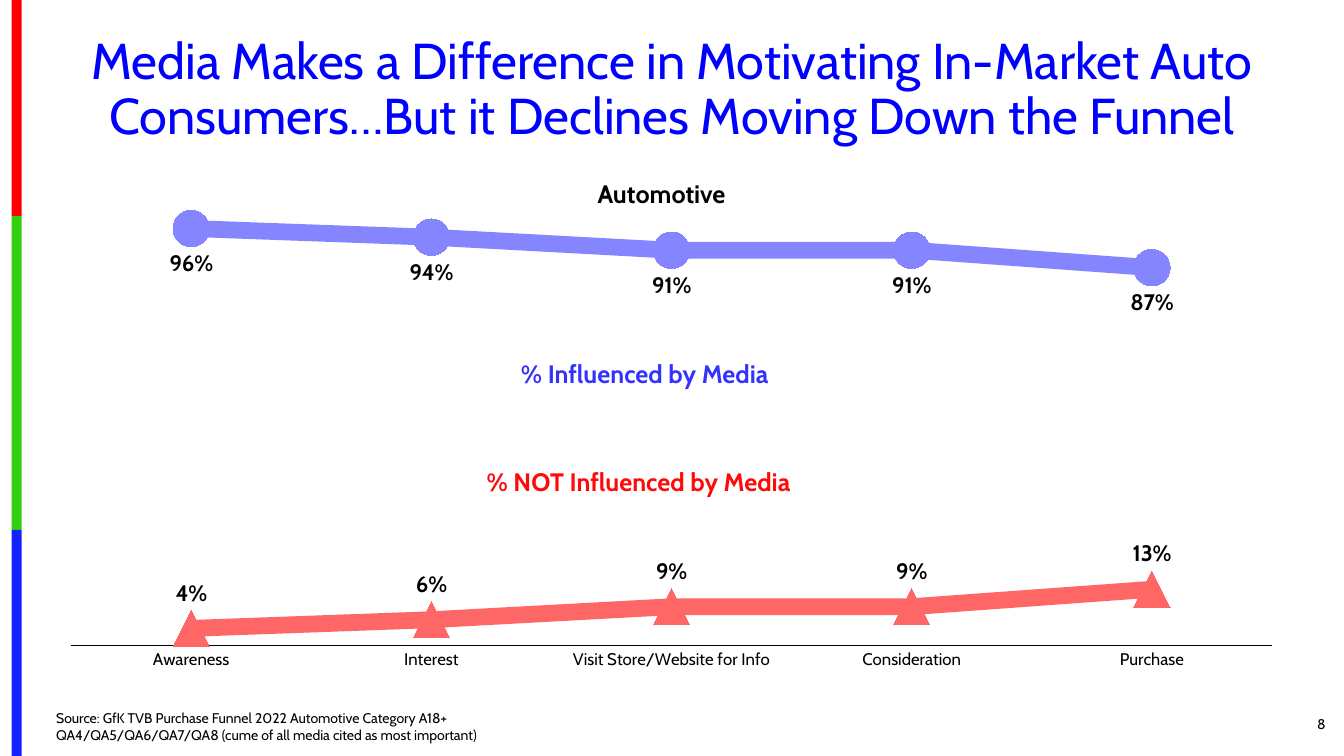
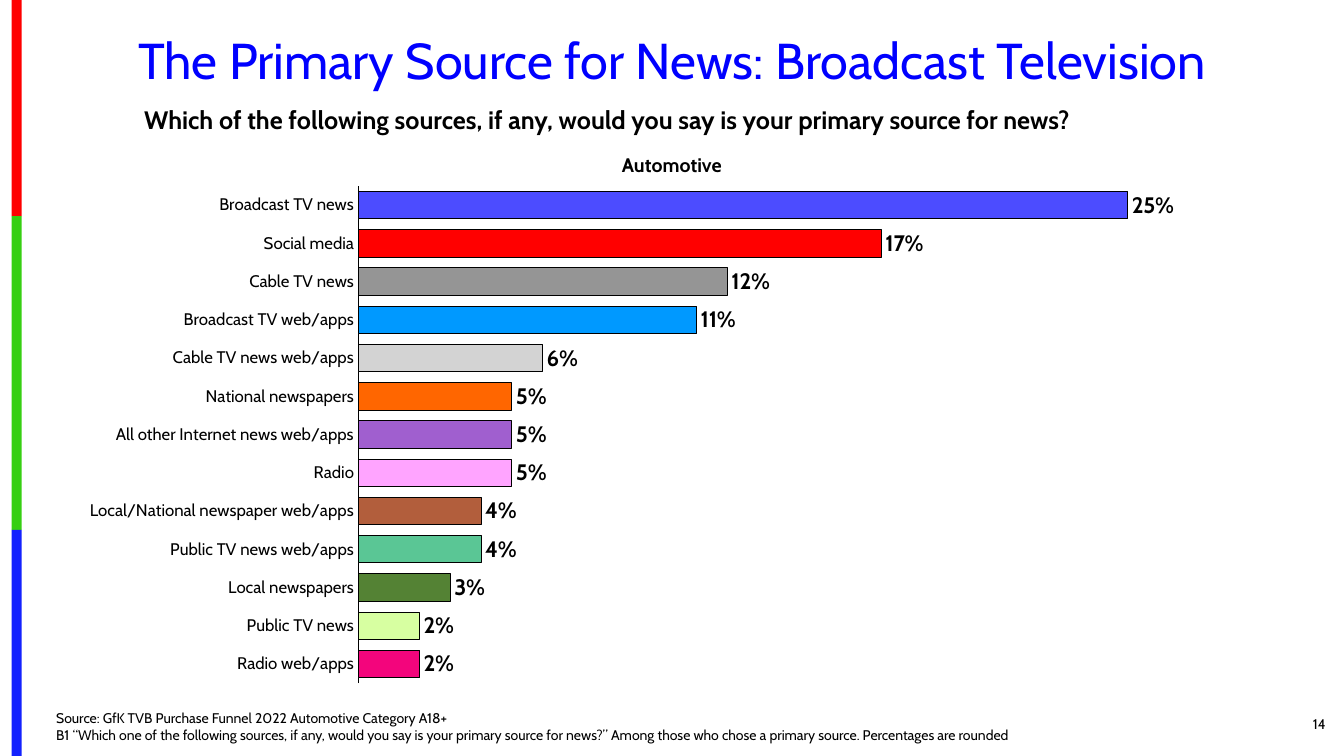
from lxml import etree
from pptx import Presentation
from pptx import util as u
from pptx.chart.data import CategoryChartData
from pptx.dml.color import RGBColor
from pptx.enum import chart as ch, shapes, text
from pptx.oxml.ns import qn

Pt = u.Pt
BLACK = RGBColor(0, 0, 0)
TITLE_BLUE = RGBColor(0x00, 0x00, 0xFF)
INFLUENCED = RGBColor(0x33, 0x33, 0xFF)
NOT_INFLUENCED = RGBColor(0xFF, 0x09, 0x09)
INFLUENCED_LINE = RGBColor(0x85, 0x85, 0xFF)
NOT_INFLUENCED_LINE = RGBColor(0xFF, 0x66, 0x66)

# Shared look
FONT = "Cabin"
SLIDE_SIZE = (960, 540)
BAND_LEFT, BAND_WIDTH = 8.3, 7.2
BAND_EDGES = (0, 154.5, 378.5, 540)
BAND_COLOURS = (RGBColor(0xFE, 0, 0), RGBColor(0x36, 0xCF, 0x12), RGBColor(0x13, 0x22, 0xFE))
LEFT, CENTER, RIGHT = text.PP_ALIGN.LEFT, text.PP_ALIGN.CENTER, text.PP_ALIGN.RIGHT
TOP, MIDDLE, BOTTOM = text.MSO_ANCHOR.TOP, text.MSO_ANCHOR.MIDDLE, text.MSO_ANCHOR.BOTTOM
STYLES = {
    "title": dict(font=dict(size=Pt(36), color=TITLE_BLUE),
                  paragraph=dict(alignment=CENTER, line_spacing=0.9), anchor=TOP),
    "heading": dict(font=dict(size=Pt(18), bold=True), paragraph=dict(alignment=LEFT), anchor=TOP),
    "caption": dict(font=dict(size=Pt(14), bold=True), paragraph=dict(alignment=CENTER), anchor=TOP),
    "source": dict(font=dict(size=Pt(10)), paragraph=dict(alignment=LEFT), anchor=BOTTOM),
    "number": dict(font=dict(size=Pt(10)), paragraph=dict(alignment=RIGHT), anchor=MIDDLE),
}
TITLE_BOX = (33, 22.3, 894, 86)
SOURCE_BOX = (33, 502.5, 744, 31.7)
NUMBER_BOX = (876, 502.5, 78, 28.8)
SOURCE = "Source: GfK TVB Purchase Funnel 2022 Automotive Category A18+"

# Content: purchase funnel
FUNNEL_STAGES = ["Awareness", "Interest", "Visit Store/Website for Info", "Consideration", "Purchase"]
FUNNEL_LINES = [
    ("Influenced", (0.96, 0.94, 0.91, 0.91, 0.87), INFLUENCED_LINE,
     ch.XL_MARKER_STYLE.CIRCLE, ch.XL_LABEL_POSITION.BELOW),
    ("Not influenced", (0.04, 0.06, 0.09, 0.09, 0.13), NOT_INFLUENCED_LINE,
     ch.XL_MARKER_STYLE.TRIANGLE, ch.XL_LABEL_POSITION.ABOVE),
]

# Content: news sources
NEWS_SOURCES = [
    ("Broadcast TV news", 0.25, "4C4CFF"),
    ("Social media", 0.17, "FF0000"),
    ("Cable TV news", 0.12, "959595"),
    ("Broadcast TV web/apps", 0.11, "0099FF"),
    ("Cable TV news web/apps", 0.06, "D3D3D3"),
    ("National newspapers", 0.05, "FF6600"),
    ("All other Internet news web/apps", 0.05, "A05FCF"),
    ("Radio", 0.05, "FFA4FF"),
    ("Local/National newspaper web/apps", 0.04, "B25E3C"),
    ("Public TV news web/apps", 0.04, "5AC695"),
    ("Local newspapers", 0.03, "548234"),
    ("Public TV news", 0.02, "D7FFA1"),
    ("Radio web/apps", 0.02, "F3057C"),
]

# Content: slides, with labels as (text, style, box, colour)
FUNNEL_SLIDE = dict(
    title="Media Makes a Difference in Motivating In-Market Auto Consumers…"
          "But it Declines Moving Down the Funnel",
    number="8",
    source=[SOURCE, "QA4/QA5/QA6/QA7/QA8 (cume of all media cited as most important)"],
    labels=[
        ("% Influenced by Media", "heading", (365, 252.7, 228, 29), INFLUENCED),
        ("% NOT Influenced by Media", "heading", (340.5, 329.7, 272, 29), NOT_INFLUENCED),
        ("Automotive", "heading", (419.8, 123.8, 120, 29), BLACK),
    ],
)
NEWS_SLIDE = dict(
    title="The Primary Source for News: Broadcast Television",
    number="14",
    source=[SOURCE, "B1 “Which one of the following sources, if any, would you say is your primary "
                    "source for news?” Among those who chose a primary source. Percentages are rounded"],
    labels=[
        ("Which of the following sources, if any, would you say is your primary source for news?",
         "heading", (95.8, 70.6, 802, 29), BLACK),
        ("Automotive", "caption", (431.3, 105.8, 97.2, 24.5), BLACK),
    ],
)


def apply_format(target, values):
    for name, value in values.items():
        if name == "color":
            target.color.rgb = value
        else:
            setattr(target, name, value)


def points(values):
    return [Pt(value) for value in values]


def add_text(slide, lines, style_name, box, colour=None):
    style = STYLES[style_name]
    frame = slide.shapes.add_textbox(*points(box)).text_frame
    apply_format(frame, dict(word_wrap=True, vertical_anchor=style["anchor"]))
    frame.text = "\n".join(lines)
    font = {"name": FONT, "color": colour or BLACK, **style["font"]}
    for paragraph in frame.paragraphs:
        apply_format(paragraph, style["paragraph"])
        apply_format(paragraph.runs[0].font, font)


def start_slide(presentation, content):
    """Add a slide with bands, title, source and number."""
    slide = presentation.slides.add_slide(presentation.slide_layouts[6])
    for top, bottom, colour in zip(BAND_EDGES, BAND_EDGES[1:], BAND_COLOURS):
        band = slide.shapes.add_shape(shapes.MSO_SHAPE.RECTANGLE,
                                      *points((BAND_LEFT, top, BAND_WIDTH, bottom - top)))
        band.shadow.inherit = False
        band.fill.solid()
        band.fill.fore_color.rgb = colour
        band.line.fill.background()
    add_text(slide, [content["title"]], "title", TITLE_BOX)
    add_text(slide, [content["number"]], "number", NUMBER_BOX)
    add_text(slide, content["source"], "source", SOURCE_BOX)
    return slide


def add_labels(slide, content):
    for label, style_name, box, colour in content["labels"]:
        add_text(slide, [label], style_name, box, colour)


def set_plot_area(chart, x, y, w, h):
    """Place the inner plot area by fractions of the chart."""
    plot_area = chart.plots[0]._element.getparent()
    for old in plot_area.findall(qn("c:layout")):
        plot_area.remove(old)
    layout = etree.Element(qn("c:layout"))
    manual = etree.SubElement(layout, qn("c:manualLayout"))
    settings = dict(layoutTarget="inner", xMode="edge", yMode="edge", x=x, y=y, w=w, h=h)
    for name, value in settings.items():
        etree.SubElement(manual, qn("c:" + name)).set("val", str(value))
    plot_area.insert(0, layout)


def add_chart(slide, kind, box, categories, series, maximum, plot_area):
    data = CategoryChartData(number_format="0%")
    data.categories = categories
    for name, values in series:
        data.add_series(name, values)
    chart = slide.shapes.add_chart(kind, *points(box), data).chart
    apply_format(chart, dict(has_title=False, has_legend=False))
    apply_format(chart.font, dict(name=FONT, size=Pt(10), color=BLACK))
    apply_format(chart.value_axis, dict(visible=False, has_major_gridlines=False,
                                        minimum_scale=0, maximum_scale=maximum))
    axis = chart.category_axis
    apply_format(axis, dict(major_tick_mark=ch.XL_TICK_MARK.NONE,
                            minor_tick_mark=ch.XL_TICK_MARK.NONE, has_major_gridlines=False))
    apply_format(axis.tick_labels.font, dict(name=FONT, size=Pt(12), color=BLACK))
    apply_format(axis.format.line, dict(color=BLACK, width=Pt(0.75)))
    chart.plots[0].vary_by_categories = False
    set_plot_area(chart, *plot_area)
    return chart


def label_values(series, position):
    labels = series.data_labels
    apply_format(labels, dict(show_value=True, number_format="0%",
                              number_format_is_linked=False, position=position))
    apply_format(labels.font, dict(name=FONT, size=Pt(16), bold=True, color=BLACK))


def build_funnel(presentation):
    slide = start_slide(presentation, FUNNEL_SLIDE)
    chart = add_chart(slide, ch.XL_CHART_TYPE.LINE_MARKERS, (33, 144, 893.5, 341.3),
                      FUNNEL_STAGES, [line[:2] for line in FUNNEL_LINES], 1,
                      (0.02, 0.02, 0.96, 0.91))
    for series, (_, _, colour, marker, position) in zip(chart.plots[0].series, FUNNEL_LINES):
        series.smooth = False
        apply_format(series.format.line, dict(color=colour, width=Pt(12)))
        apply_format(series.marker, dict(style=marker, size=26))
        series.marker.format.fill.solid()
        series.marker.format.fill.fore_color.rgb = colour
        series.marker.format.line.fill.background()
        label_values(series, position)
    add_labels(slide, FUNNEL_SLIDE)


def build_news(presentation):
    slide = start_slide(presentation, NEWS_SLIDE)
    names, shares, colours = zip(*NEWS_SOURCES)
    chart = add_chart(slide, ch.XL_CHART_TYPE.BAR_CLUSTERED, (18, 98.6, 936, 404),
                      names, [("Primary source", shares)], 0.3, (0.254, 0.085, 0.705, 0.879))
    chart.category_axis.reverse_order = True
    chart.plots[0].gap_width = 40
    series = chart.plots[0].series[0]
    for index, colour in enumerate(colours):
        bar = series.points[index].format
        bar.fill.solid()
        bar.fill.fore_color.rgb = RGBColor.from_string(colour)
        apply_format(bar.line, dict(color=BLACK, width=Pt(0.75)))
    label_values(series, ch.XL_LABEL_POSITION.OUTSIDE_END)
    add_labels(slide, NEWS_SLIDE)


def main():
    presentation = Presentation()
    presentation.slide_width, presentation.slide_height = points(SLIDE_SIZE)
    build_funnel(presentation)
    build_news(presentation)
    presentation.save("out.pptx")


if __name__ == "__main__":
    main()
